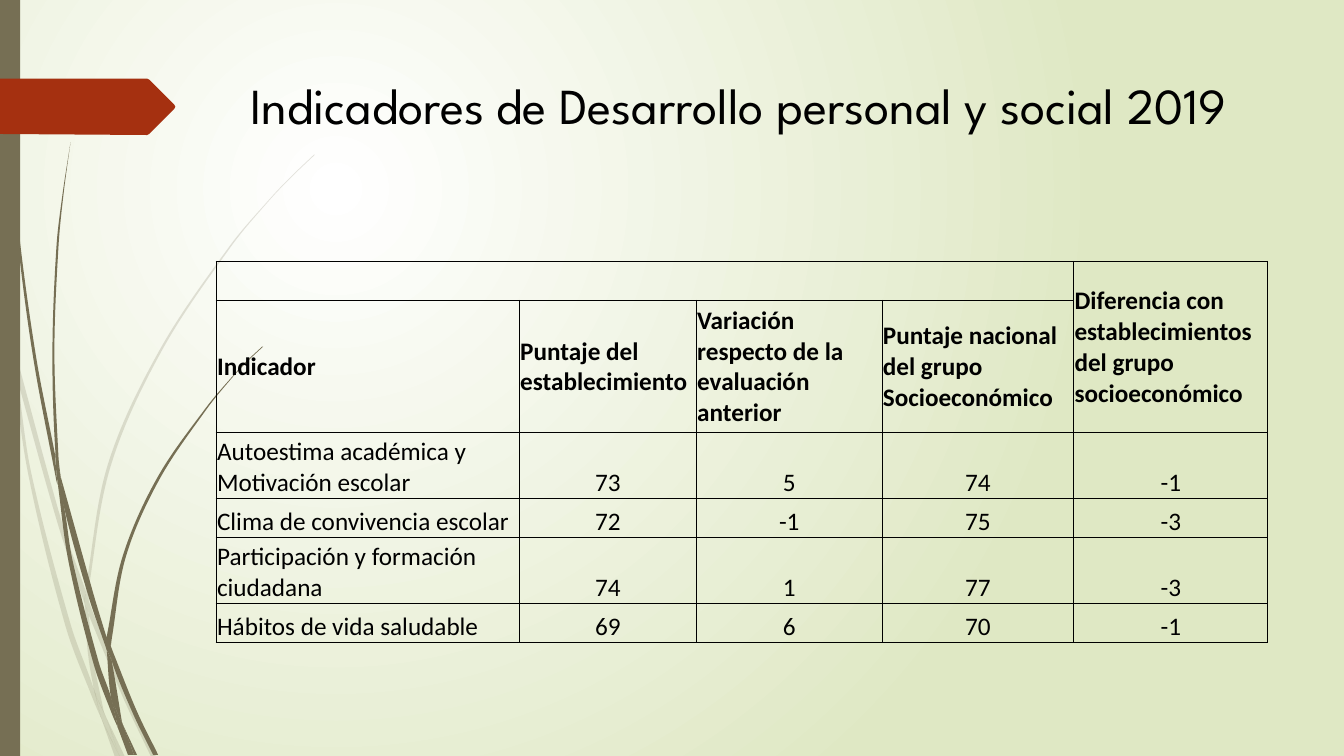
"""Build the slide on the 2019 personal and social development indicators."""
from dataclasses import dataclass
from typing import Any

from lxml.etree import SubElement
from pptx import Presentation
from pptx.dml.color import RGBColor
from pptx.enum.shapes import MSO_SHAPE
from pptx.enum.text import MSO_ANCHOR, MSO_AUTO_SIZE, PP_ALIGN
from pptx.oxml.ns import qn
from pptx.util import Cm, Pt

BLACK = RGBColor(0x00, 0x00, 0x00)
WHITE = RGBColor(0xFF, 0xFF, 0xFF)
PALE_GREEN = RGBColor(0xDF, 0xE8, 0xC4)
OLIVE = RGBColor(0x76, 0x6F, 0x54)
RUST = RGBColor(0xA5, 0x30, 0x10)

GRID = Cm(2.54) / 100
Points = list[tuple[float, float]]


@dataclass
class Blade:
    """One piece of grass between two smooth edges, in grid units."""
    outward: Points
    back: Points


@dataclass
class Tuft:
    """Blades that share one opacity, in percent."""
    opacity: int
    blades: list[Blade]


@dataclass
class Indicator:
    """One table row of scores."""
    label: str
    scores: tuple[int, int, int, int]


BACK_TUFT = Tuft(20, [
    Blade([(11, 350), (9, 322), (0, 282)], [(0, 299), (10, 344), (11, 350)]),
    Blade([(17, 376), (58, 522), (84, 599)], [(85, 586), (62, 520), (14, 345)]),
    Blade([(88, 610), (123, 694), (150, 751)], [(155, 751), (127, 692), (92, 607), (88, 596)]),
    Blade([(105, 711), (119, 751)], [(124, 751), (105, 711)]),
    Blade([(11, 350), (28, 470), (65, 621), (92, 693), (101, 714)],
          [(99, 707), (93, 683), (70, 619), (31, 469), (17, 376), (11, 350)]),
    Blade([(84, 599), (87, 646), (93, 683), (96, 692), (105, 711)],
          [(103, 706), (91, 646), (88, 610), (84, 599)]),
    Blade([(88, 596), (88, 584), (110, 462), (160, 349), (229, 245), (268, 198), (290, 175), (312, 154)],
          [(312, 153), (289, 175), (268, 197), (228, 244), (158, 348), (107, 461), (85, 584)]),
    Blade([(101, 714), (114, 751)], [(119, 751), (101, 714)]),
    Blade([(88, 610), (88, 596)], [(85, 586), (84, 599), (88, 608)]),
    Blade([(93, 683), (99, 707), (101, 714), (119, 751)], [(119, 751), (105, 711), (96, 692)]),
])
FRONT_TUFT = Tuft(100, [
    Blade([(3, 0), (4, 48), (7, 110), (17, 233), (33, 355), (56, 477), (57, 481)],
          [(55, 457), (55, 453), (36, 355), (19, 232), (8, 109), (5, 48), (4, 0)]),
    Blade([(60, 472), (64, 505), (88, 592), (106, 645)], [(106, 633), (93, 590), (60, 472)]),
    Blade([(110, 641), (111, 656), (132, 708), (152, 749)], [(157, 749), (136, 706), (113, 649), (110, 641)]),
    Blade([(57, 477), (68, 557), (93, 659), (111, 708), (117, 722)],
          [(116, 717), (110, 691), (98, 657), (72, 556), (64, 505), (57, 477)]),
    Blade([(70, 141), (62, 193), (56, 245), (52, 349), (55, 449), (60, 472)],
          [(60, 472), (58, 453), (54, 349), (58, 245), (63, 193), (70, 141)]),
    Blade([(122, 719), (133, 749)], [(136, 749), (122, 719)]),
    Blade([(55, 449), (55, 453), (57, 477), (64, 505)], [(60, 472), (55, 449)]),
    Blade([(110, 641), (111, 633), (125, 552), (158, 476), (205, 406), (231, 374), (245, 359), (261, 344)],
          [(260, 344), (245, 358), (231, 373), (204, 405), (156, 474), (122, 551), (106, 631)]),
    Blade([(117, 722), (127, 749)], [(131, 749), (117, 722)]),
    Blade([(106, 645), (110, 691), (116, 706), (122, 719)], [(121, 716), (111, 656), (109, 651), (106, 645)]),
    Blade([(106, 645), (109, 651), (111, 656)], [(110, 641), (106, 631), (106, 645)]),
    Blade([(110, 691), (116, 717), (117, 722), (130, 749)], [(133, 749), (122, 719), (116, 706), (110, 691)]),
])
ARROW = [(0, 78), (146, 78), (148, 79), (173, 104), (174, 106), (173, 108), (148, 133), (146, 134), (0, 133)]

TITLE = "Indicadores de Desarrollo personal y social 2019"
HEADINGS = ["Indicador", "Puntaje del\nestablecimiento", "Variación respecto de la evaluación anterior",
            "Puntaje nacional del grupo\nSocioeconómico"]
DIFFERENCE_HEADING = "Diferencia con\nestablecimientos del grupo\nsocioeconómico"
INDICATORS = [
    Indicator("Autoestima académica y Motivación escolar", (73, 5, 74, -1)),
    Indicator("Clima de convivencia escolar", (72, -1, 75, -3)),
    Indicator("Participación y formación ciudadana", (74, 1, 77, -3)),
    Indicator("Hábitos de vida saludable", (69, 6, 70, -1)),
]
COLUMN_WIDTHS = [7.64, 4.46, 4.68, 4.83, 4.89]
ROW_HEIGHTS = [0.98, 3.33, 1.66, 0.98, 1.66, 0.98]

TITLE_BOX = {"left": Cm(6.05), "top": Cm(1.73), "width": Cm(25.91), "height": Cm(3.56)}
TITLE_FRAME = {"vertical_anchor": MSO_ANCHOR.TOP, "word_wrap": True, "auto_size": MSO_AUTO_SIZE.NONE}
TITLE_FONT = {"name": "League Spartan", "size": Pt(36), "bold": False}
CELL_MARGINS = {"margin_left": Cm(0.02), "margin_right": Cm(0.02), "margin_top": Cm(0.02), "margin_bottom": 0}
CELL_FONT = {"name": "Calibri", "size": Pt(18)}
TABLE_FLAGS = {"first_row": False, "horz_banding": False}


def apply(target: Any, values: dict[str, Any]) -> None:
    """Set each named attribute on the target."""
    for name, value in values.items():
        setattr(target, name, value)


def bend(outline: Any, first: int, last: int) -> None:
    """Turn the segments between two corners of an outline into smooth curves."""
    segments = list(outline)[first:last + 1]
    knots = [complex(int(pt.get("x")), int(pt.get("y"))) for segment in segments for pt in segment]
    neighbours = zip(knots[:1] + knots[:-1], knots[1:] + knots[-1:])
    slopes = [(after - before) / abs(after - before) for before, after in neighbours]
    for i, segment in enumerate(segments[1:]):
        reach = abs(knots[i + 1] - knots[i]) / 3
        segment.tag = qn("a:cubicBezTo")
        handles = (knots[i] + slopes[i] * reach, knots[i + 1] - slopes[i + 1] * reach)
        for place, handle in enumerate(handles):
            point = SubElement(segment, qn("a:pt"), x=str(round(handle.real)), y=str(round(handle.imag)))
            segment.insert(place, point)


def paint(shape: Any, color: RGBColor, opacity: int = 100) -> None:
    """Give a shape a flat fill without line or shadow."""
    shape.shadow.inherit = False
    shape.fill.solid()
    shape.fill.fore_color.rgb = color
    shape.line.fill.background()
    if opacity < 100:
        for tint in shape.element.iter(qn("a:srgbClr")):
            SubElement(tint, qn("a:alpha"), val=str(opacity * 1000))


def draw_outline(shapes: Any, outline: Points, color: RGBColor, opacity: int = 100) -> Any:
    """Draw a closed outline given in grid units."""
    corners = [(x * GRID, y * GRID) for x, y in outline]
    builder = shapes.build_freeform(*corners[0])
    builder.add_line_segments(corners[1:], close=True)
    shape = builder.convert_to_shape()
    paint(shape, color, opacity)
    return shape


def draw_tuft(shapes: Any, tuft: Tuft) -> None:
    """Draw the blades of a tuft as one group."""
    group = shapes.add_group_shape()
    for blade in tuft.blades:
        corners = blade.outward + blade.back
        shape = draw_outline(group.shapes, corners, OLIVE, tuft.opacity)
        outline = next(shape.element.iter(qn("a:path")))
        turn = len(blade.outward)
        bend(outline, 0, turn - 1)
        bend(outline, turn, len(corners) - 1)


def draw_background(slide: Any) -> None:
    """Fill the background with a circular gradient."""
    fill = slide.background.fill
    fill.gradient()
    for stop, color in zip(fill.gradient_stops, (WHITE, PALE_GREEN)):
        stop.color.rgb = color
    gradient = next(slide.element.iter(qn("a:gradFill")))
    gradient.remove(gradient.find(qn("a:lin")))
    circle = SubElement(gradient, qn("a:path"), {"path": "circle"})
    SubElement(circle, qn("a:fillToRect"), l="50000", t="50000", r="100000", b="100000")


def format_cell(cell: Any, anchor: MSO_ANCHOR, bold: bool, align: PP_ALIGN) -> None:
    """Apply borders, margins and font to a table cell."""
    properties = cell._tc.get_or_add_tcPr()
    for side in ("a:lnL", "a:lnR", "a:lnT", "a:lnB"):
        border = SubElement(properties, qn(side), w=str(Pt(1)))
        SubElement(SubElement(border, qn("a:solidFill")), qn("a:srgbClr"), val=str(BLACK))
    cell.fill.background()
    apply(cell, CELL_MARGINS | {"vertical_anchor": anchor})
    for paragraph in cell.text_frame.paragraphs:
        paragraph.alignment = align
        for run in paragraph.runs:
            apply(run.font, CELL_FONT | {"bold": bold})
            run.font.color.rgb = BLACK


def draw_indicators(shapes: Any) -> None:
    """Draw the table of indicators."""
    rows = [[""] * 4 + [DIFFERENCE_HEADING], HEADINGS + [""]]
    rows += [[item.label, *map(str, item.scores)] for item in INDICATORS]
    table = shapes.add_table(len(rows), len(COLUMN_WIDTHS), Cm(5.45), Cm(6.59),
                             Cm(sum(COLUMN_WIDTHS)), Cm(sum(ROW_HEIGHTS))).table
    apply(table, TABLE_FLAGS)
    for column, width in zip(table.columns, COLUMN_WIDTHS):
        column.width = Cm(width)
    for r, (texts, height) in enumerate(zip(rows, ROW_HEIGHTS)):
        table.rows[r].height = Cm(height)
        heading = r < 2
        for c, text in enumerate(texts):
            table.cell(r, c).text = text
            format_cell(table.cell(r, c), MSO_ANCHOR.MIDDLE if heading else MSO_ANCHOR.BOTTOM, heading,
                        PP_ALIGN.LEFT if heading or c == 0 else PP_ALIGN.CENTER)
    table.cell(0, 0).merge(table.cell(0, 3))
    table.cell(0, 4).merge(table.cell(1, 4))


def main() -> None:
    """Assemble and save the slide."""
    deck = Presentation()
    apply(deck, {"slide_width": Cm(33.87), "slide_height": Cm(19.05)})
    slide = deck.slides.add_slide(deck.slide_layouts[5])
    draw_background(slide)
    for tuft in (BACK_TUFT, FRONT_TUFT):
        draw_tuft(slide.shapes, tuft)
    paint(slide.shapes.add_shape(MSO_SHAPE.RECTANGLE, 0, 0, Cm(0.51), Cm(19.05)), OLIVE)
    draw_outline(slide.shapes, ARROW, RUST)
    title = slide.shapes.title
    apply(title, TITLE_BOX)
    title.text_frame.text = TITLE
    apply(title.text_frame, TITLE_FRAME)
    heading = title.text_frame.paragraphs[0]
    heading.alignment = PP_ALIGN.LEFT
    apply(heading.runs[0].font, TITLE_FONT)
    heading.runs[0].font.color.rgb = BLACK
    draw_indicators(slide.shapes)
    deck.save("out.pptx")


if __name__ == "__main__":
    main()
